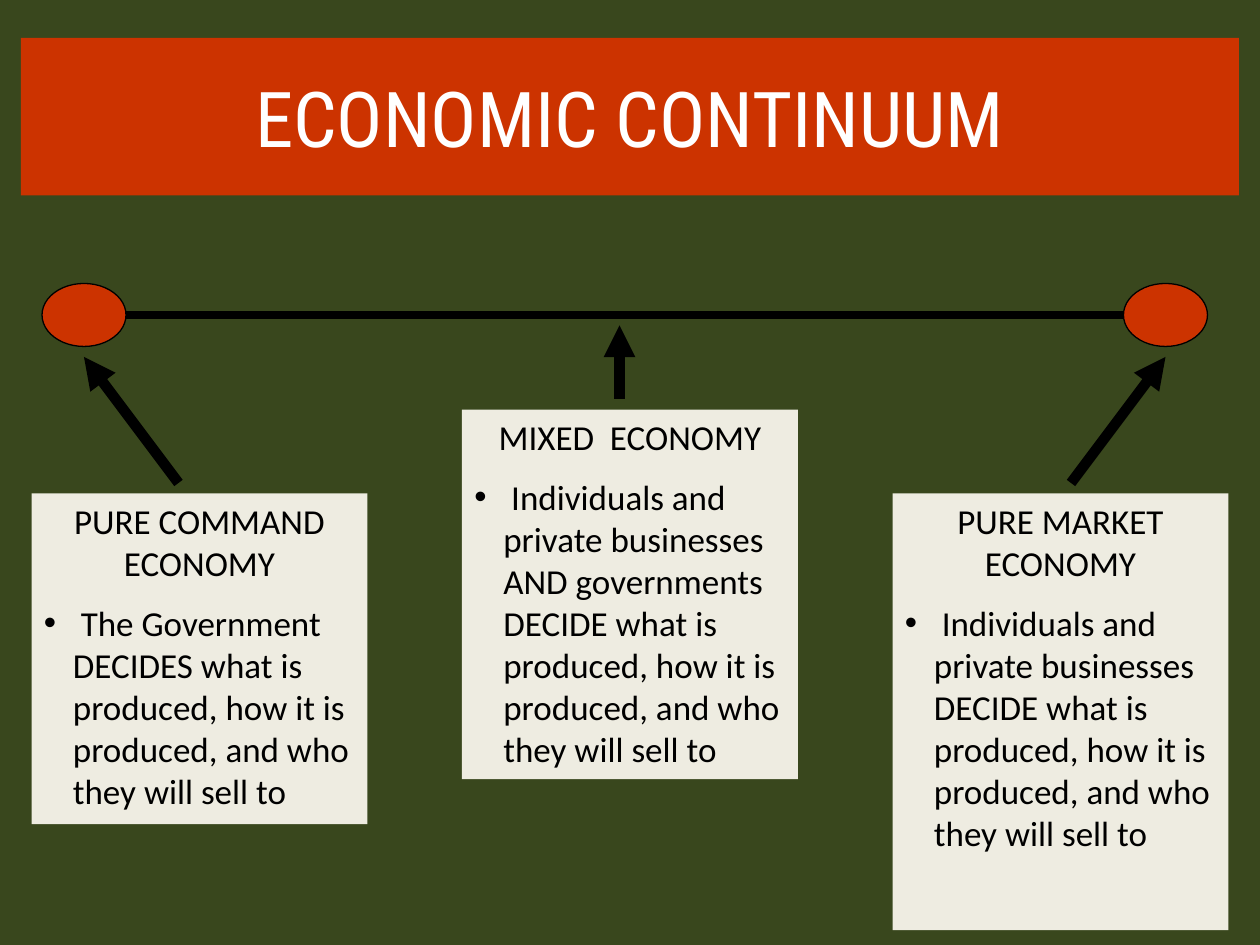
from pptx import Presentation
from pptx.dml.color import RGBColor as RGB
from pptx.enum.shapes import MSO_CONNECTOR as LINK, MSO_SHAPE as SHAPE
from pptx.enum.text import MSO_ANCHOR as ANCHOR, MSO_AUTO_SIZE as AUTO, PP_ALIGN as ALIGN
from pptx.oxml.ns import qn
from pptx.util import Inches, Pt
from lxml.etree import SubElement as sub

HUES = {"back": "39471D", "red": "CC3300", "card": "EEECE1", "ink": "000000", "white": "FFFFFF"}
INK = {k: RGB.from_string(v) for k, v in HUES.items()}

deck = Presentation()
deck.slide_width, deck.slide_height = Inches(10), Inches(7.5)
unit = deck.slide_width / 120
slide = deck.slides.add_slide(deck.slide_layouts[5])
slide.background.fill.solid()
slide.background.fill.fore_color.rgb = INK["back"]


def grid(*cells):
    return [round(c * unit) for c in cells]


def write(para, text, size, face, hue):
    para.text = text
    look = {"size": Pt(size), "name": face}
    for key, val in look.items():
        setattr(para.runs[0].font, key, val)
    para.runs[0].font.color.rgb = INK[hue]


title = slide.shapes.title
title.left, title.top, title.width, title.height = grid(2, 3.6, 116, 15)
title.fill.solid()
title.fill.fore_color.rgb = INK["red"]
frame = title.text_frame
for key, val in {"word_wrap": True, "auto_size": AUTO.NONE, "vertical_anchor": ANCHOR.MIDDLE}.items():
    setattr(frame, key, val)
head = frame.paragraphs[0]
write(head, "ECONOMIC CONTINUUM", 44, "Roboto Condensed", "white")
head.alignment = ALIGN.CENTER

lines = [
    (8, 30, 110, 30, 4.5, {"headEnd": "oval", "tailEnd": "oval"}),
    (17, 46, 8, 34, 6, {"tailEnd": "triangle"}),
    (102, 46, 111, 34, 6, {"tailEnd": "triangle"}),
    (59, 38, 59, 31, 6, {"tailEnd": "triangle"}),
]
for x, y, far, low, wide, ends in lines:
    line = slide.shapes.add_connector(LINK.STRAIGHT, *grid(x, y, far, low))
    line.line.width = Pt(wide)
    line.line.color.rgb = INK["ink"]
    for tag, kind in ends.items():
        sub(line.line._get_or_add_ln(), qn("a:" + tag), type=kind)
    sub(line._element.spPr, qn("a:effectLst"))

for x in (4, 107):
    dot = slide.shapes.add_shape(SHAPE.OVAL, *grid(x, 27, 8, 6))
    dot.shadow.inherit = False
    dot.fill.solid()
    dot.fill.fore_color.rgb = INK["red"]
    dot.line.color.rgb = INK["ink"]
    dot.line.width = Pt(0.75)

who = "Individuals and private businesses"
cards = [
    (3, 47, 31.5, "PURE COMMAND ECONOMY", "The Government DECIDES"),
    (44, 39, 35.2, "MIXED  ECONOMY", f"{who} AND governments DECIDE"),
    (85, 47, 41.6, "PURE MARKET ECONOMY", f"{who} DECIDE"),
]
for x, y, tall, name, lead in cards:
    card = slide.shapes.add_textbox(*grid(x, y, 32, tall))
    card.fill.solid()
    card.fill.fore_color.rgb = INK["card"]
    frame = card.text_frame
    frame.word_wrap = True
    frame.auto_size = AUTO.NONE
    top = frame.paragraphs[0]
    write(top, name, 20, "Calibri", "ink")
    top.alignment = ALIGN.CENTER
    item = frame.add_paragraph()
    item.space_before = Pt(10)
    props = item._p.get_or_add_pPr()
    props.set("marL", str(Inches(0.23)))
    props.set("indent", str(-Inches(0.23)))
    sub(props, qn("a:buFont"), typeface="Arial")
    sub(props, qn("a:buChar"), char="•")
    write(item, f" {lead} what is produced, how it is produced, and who they will sell to", 20, "Calibri", "ink")

deck.save("out.pptx")
